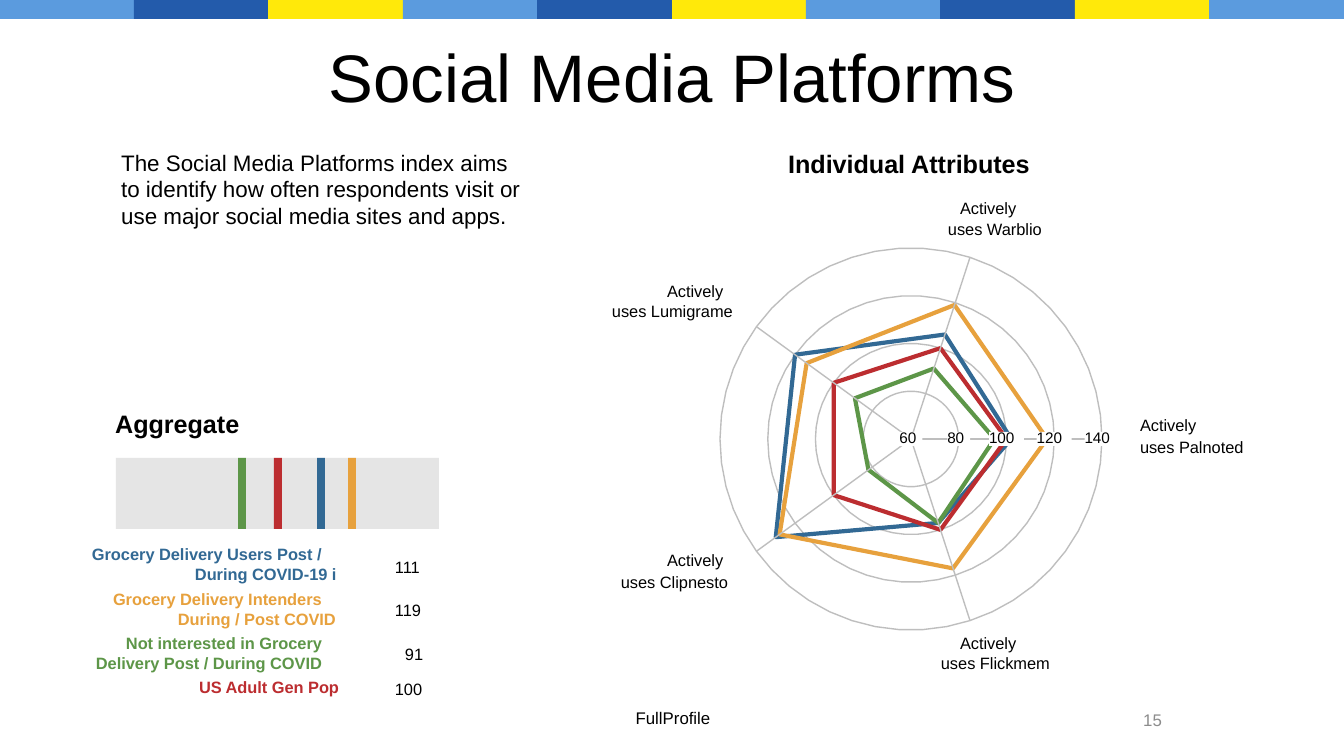
from math import cos, pi, sin

from lxml.etree import SubElement
from pptx import Presentation
from pptx.dml.color import RGBColor
from pptx.enum.shapes import MSO_CONNECTOR, MSO_SHAPE
from pptx.enum.text import MSO_ANCHOR, MSO_AUTO_SIZE, PP_ALIGN
from pptx.oxml.ns import qn
from pptx.util import Emu, Pt

FONT = "Arial"
COLORS = {
    "sky": "5B9BDE", "royal": "235BAB", "yellow": "FFE90A",
    "users": "326994", "intenders": "E7A13D",
    "uninterested": "5D9648", "adults": "BC2D30",
    "text": "000000", "muted": "8C8C8C",
    "grid": "BEBEBE", "strip": "E5E5E5", "white": "FFFFFF",
}
AGGREGATE = {"uninterested": 91, "adults": 100, "users": 111, "intenders": 119}
ATTRIBUTES = {
    "users": (102, 106, 120, 130, 97),
    "intenders": (117, 119, 114, 128, 117),
    "uninterested": (95, 91, 89, 82, 97),
    "adults": (100, 100, 100, 100, 100),
}
LEGEND = [
    ("users", 15, [("Grocery Delivery Users Post /", 0, 271),
                   ("During COVID-19 i", 20, 168)]),
    ("intenders", 58, [("Grocery Delivery Intenders", 45, 250),
                       ("During / Post COVID", 65, 185)]),
    ("uninterested", 102, [("Not interested in Grocery", 89, 237),
                           ("Delivery Post / During COVID", 109, 267)]),
    ("adults", 137, [("US Adult Gen Pop", 133, 164)]),
]
PLATFORMS = [
    ("uses Palnoted", (529, 219), (529, 242, 121, 13)),
    ("uses Warblio", (349, 2), (337, 24, 101, 13)),
    ("uses Lumigrame", (56, 85), (1, 105, 126, 16)),
    ("uses Clipnesto", (56, 354), (10, 377, 116, 13)),
    ("uses Flickmem", (349, 437), (330, 457, 120, 16)),
]


def px(length):
    return Emu(round(length * 914400 / 134.4))


def color(name):
    return RGBColor.from_string(COLORS[name])


def add_run(paragraph, text, size, tone="text", bold=False):
    run = paragraph.add_run()
    run.text = text
    run.font.name = FONT
    run.font.size = Pt(size)
    run.font.bold = bold
    run.font.color.rgb = color(tone)


def add_bar(shapes, box, tone):
    bar = shapes.add_shape(MSO_SHAPE.RECTANGLE, *map(px, box))
    bar.shadow.inherit = False
    bar.fill.solid()
    bar.fill.fore_color.rgb = color(tone)
    bar.line.fill.background()


def add_label(shapes, box, text, size=8.8, tone="text", bold=False):
    frame = shapes.add_textbox(*map(px, box)).text_frame
    frame.margin_left = frame.margin_right = 0
    frame.margin_top = frame.margin_bottom = 0
    frame.vertical_anchor = MSO_ANCHOR.MIDDLE
    frame.word_wrap = False
    frame.paragraphs[0].line_spacing = Pt(size)
    add_run(frame.paragraphs[0], text, size, tone, bold)


def add_body(shapes, box, text, size, bold=False, align=PP_ALIGN.LEFT,
             tone="text", anchor=MSO_ANCHOR.TOP):
    frame = shapes.add_textbox(*map(px, box)).text_frame
    frame.word_wrap = True
    frame.vertical_anchor = anchor
    frame.paragraphs[0].alignment = align
    add_run(frame.paragraphs[0], text, size, tone, bold)


def add_outline(shapes, points, tone, width):
    start, *rest = [(px(x), px(y)) for x, y in points]
    builder = shapes.build_freeform(*start)
    builder.add_line_segments(rest, close=True)
    outline = builder.convert_to_shape()
    outline.shadow.inherit = False
    outline.fill.background()
    outline.line.color.rgb = color(tone)
    outline.line.width = Pt(width)


def add_spoke(shapes, start, end):
    spoke = shapes.add_connector(MSO_CONNECTOR.STRAIGHT, *map(px, start + end))
    spoke.line.color.rgb = color("grid")
    spoke.line.width = Pt(0.75)
    SubElement(spoke._element.spPr, qn("a:effectLst"))


def add_banner(shapes, box):
    left, top, width, height = box
    tones = ("sky", "royal", "yellow")
    for i in range(10):
        add_bar(shapes, (left + i * width // 10, top, width // 10 + 1, height), tones[i % 3])


def add_title(slide, box):
    title = slide.shapes.title
    title.left, title.top, title.width, title.height = map(px, box)
    frame = title.text_frame
    frame.auto_size = MSO_AUTO_SIZE.NONE
    frame.vertical_anchor = MSO_ANCHOR.MIDDLE
    frame.paragraphs[0].alignment = PP_ALIGN.CENTER
    add_run(frame.paragraphs[0], "Social Media Platforms", 36)


def add_aggregate_strip(shapes, box):
    left, top, width, height = box
    low, high = 60, 142
    add_bar(shapes, box, "strip")
    for group, value in AGGREGATE.items():
        offset = round((value - low) * width / (high - low))
        add_bar(shapes, (left + offset, top, 8, height), group)


def add_legend(shapes, box):
    left, top, width, _ = box
    names_right = left + 272
    for group, value_top, lines in LEGEND:
        for text, line_top, line_width in lines:
            add_label(shapes, (names_right - line_width, top + line_top, line_width, 16),
                      text, tone=group, bold=True)
        value = str(AGGREGATE[group])
        value_width = 31 if len(value) == 3 else 21
        add_label(shapes, (left + width - value_width, top + value_top, value_width, 12), value)


def add_radar(shapes, box):
    left, top, _, _ = box
    center_x, center_y = left + 300, top + 239
    radius, low, high, step = 191, 60, 140, 20

    def point(value, turn):
        reach = (value - low) * radius / (high - low)
        return center_x + reach * cos(2 * pi * turn), center_y - reach * sin(2 * pi * turn)

    for ring in range(high, low, -step):
        add_outline(shapes, [point(ring, i / 50) for i in range(50)], "grid", 0.75)
    for group, values in ATTRIBUTES.items():
        corners = [point(value, i / len(values)) for i, value in enumerate(values)]
        add_outline(shapes, corners, group, 2.25)
    for i in range(len(PLATFORMS)):
        add_spoke(shapes, (center_x, center_y), point(high, i / len(PLATFORMS)))

    for platform, (x, y), (name_x, name_y, width, height) in PLATFORMS:
        add_label(shapes, (left + x, top + y, 66, 16), "Actively")
        add_label(shapes, (left + name_x, top + name_y, width, height), platform)

    for tick in range(low, high + 1, step):
        x, y = point(tick, 0)
        width = 35 if tick >= 100 else 23
        plate = (x - width / 2, y - 7, width, 14)
        add_bar(shapes, plate, "white")
        add_label(shapes, plate, str(tick), size=8.2)


def main():
    deck = Presentation()
    deck.slide_width, deck.slide_height = px(1344), px(756)
    slide = deck.slides.add_slide(deck.slide_layouts[5])
    shapes = slide.shapes

    add_banner(shapes, (0, 0, 1344, 19))
    add_title(slide, (67, 31, 1210, 90))
    add_body(shapes, (102, 402, 208, 46), "Aggregate", 13.5, bold=True)
    add_body(shapes, (108, 142, 429, 210),
             "The Social Media Platforms index aims to identify how often "
             "respondents visit or use major social media sites and apps.", 12)
    add_body(shapes, (569, 701, 208, 34), "FullProfile", 9, align=PP_ALIGN.CENTER)
    add_body(shapes, (775, 142, 349, 75), "Individual Attributes", 13.5, bold=True)

    add_aggregate_strip(shapes.add_group_shape().shapes, (116, 458, 323, 71))
    add_legend(shapes.add_group_shape().shapes, (91, 548, 335, 149))
    add_radar(shapes.add_group_shape().shapes, (611, 200, 650, 473))
    add_body(shapes, (1003, 700, 172, 40), "15", 9, align=PP_ALIGN.RIGHT,
             tone="muted", anchor=MSO_ANCHOR.MIDDLE)
    deck.save("out.pptx")


if __name__ == "__main__":
    main()
